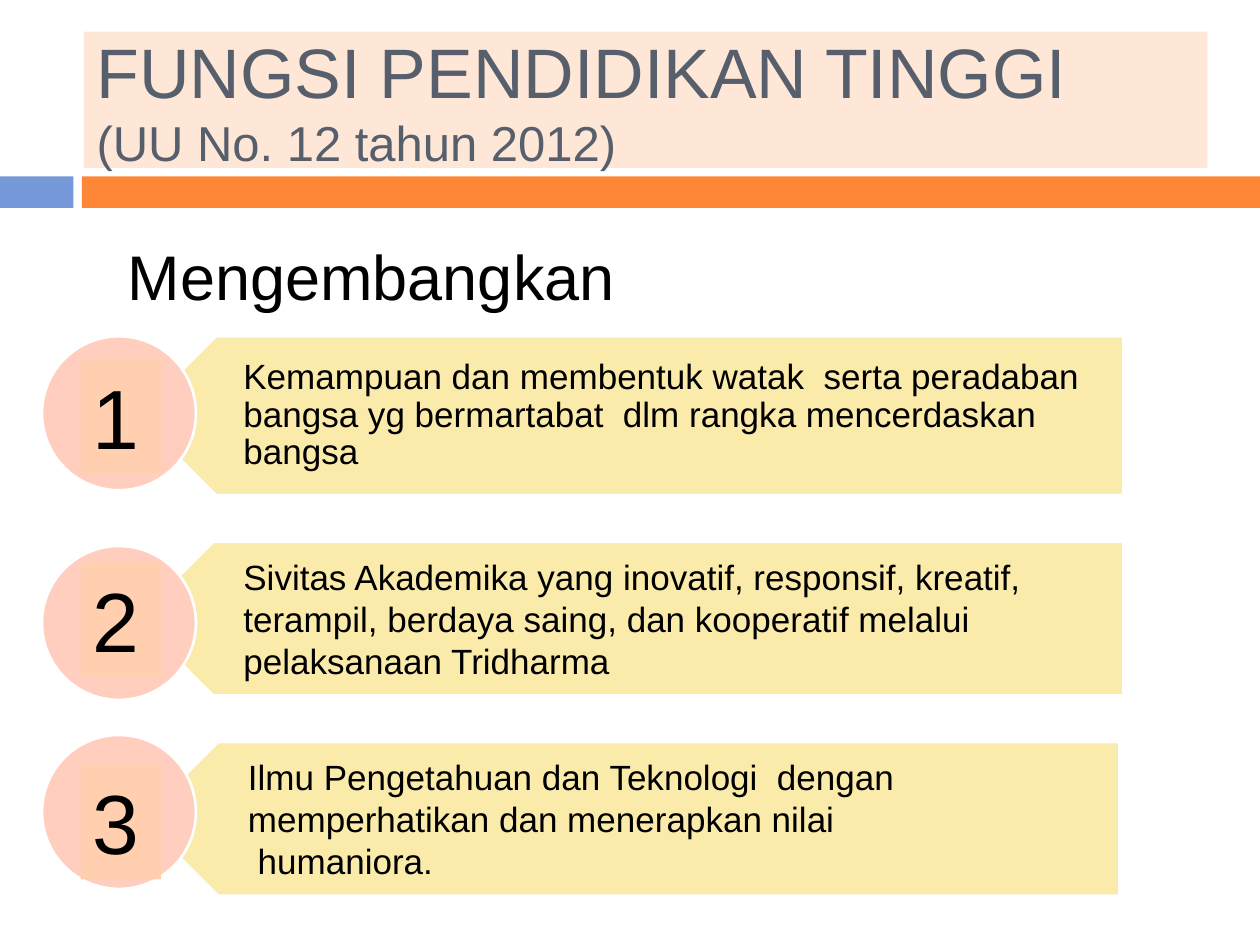
from dataclasses import dataclass

from pptx import Presentation
from pptx.dml.color import RGBColor
from pptx.enum.shapes import MSO_SHAPE
from pptx.enum.text import MSO_ANCHOR, MSO_AUTO_SIZE, PP_ALIGN
from pptx.util import Pt

RECT, OVAL, PLATE = MSO_SHAPE.RECTANGLE, MSO_SHAPE.OVAL, MSO_SHAPE.PENTAGON
TOP, MIDDLE = MSO_ANCHOR.TOP, MSO_ANCHOR.MIDDLE
LEFT, NO_FIT = PP_ALIGN.LEFT, MSO_AUTO_SIZE.NONE

FONT = "Arial"
BLACK, WHITE, SLATE = "000000", "FFFFFF", "575F6D"
BLUE, ORANGE, PEACH = "7598D9", "FE8637", "FFE7D7"
YELLOW, PINK, APRICOT = "FBEBAB", "FFCEBF", "FFCFAF"

CIRCLE_LEFT, CIRCLE_SIZE = 24, 88
NUMBER_LEFT, NUMBER_W, NUMBER_H = 46, 46, 65.5
TEXT_SHIFT = 22.4  # text starts this far right of the plate's tip
ROW_INSETS = {"margin_left": Pt(38.7), "margin_right": Pt(11.4),
              "margin_top": Pt(5.7), "margin_bottom": Pt(5.7)}


@dataclass
class Box:
    left: float
    top: float
    width: float
    height: float

    def points(self) -> tuple:
        return Pt(self.left), Pt(self.top), Pt(self.width), Pt(self.height)


@dataclass
class Row:
    plate: Box
    circle_top: float
    number_top: float
    paragraphs: list
    spacing: float = 1.0


ROWS = [
    Row(Box(78, 192.2, 564, 90.7), 192.2, 205.2,
        ["Kemampuan dan membentuk watak  serta peradaban bangsa yg "
         "bermartabat  dlm rangka mencerdaskan bangsa"], 0.9),
    Row(Box(78, 309.6, 564, 87.8), 312, 321.1,
        ["Sivitas Akademika yang inovatif, responsif, kreatif, terampil, "
         "berdaya saing, dan kooperatif melalui pelaksanaan Tridharma"]),
    Row(Box(80.6, 424, 559, 87.8), 420, 437,
        ["Ilmu Pengetahuan dan Teknologi  dengan memperhatikan dan "
         "menerapkan nilai", " humaniora."]),
]


def rgb(color: str) -> RGBColor:
    return RGBColor.from_string(color)


def paint(sp, fill: str) -> None:
    sp.fill.solid()
    sp.fill.fore_color.rgb = rgb(fill)


def add_shape(s, kind, box: Box, fill: str, outlined: bool = False):
    sp = s.shapes.add_shape(kind, *box.points())
    sp.shadow.inherit = False
    paint(sp, fill)
    if outlined:
        sp.line.color.rgb = rgb(WHITE)
        sp.line.width = Pt(1.5)
    else:
        sp.line.fill.background()
    return sp


def add_run(p, text: str, size: float, color: str = BLACK) -> None:
    r = p.add_run()
    r.text = text
    for name, value in {"name": FONT, "size": Pt(size)}.items():
        setattr(r.font, name, value)
    r.font.color.rgb = rgb(color)


def format_frame(tf, anchor=TOP, **extra) -> None:
    values = {"word_wrap": True, "auto_size": NO_FIT, "vertical_anchor": anchor}
    for name, value in {**values, **extra}.items():
        setattr(tf, name, value)


def write(sp, paragraphs: list, size: float, spacing: float = 1.0,
          anchor=TOP, **extra) -> None:
    tf = sp.text_frame
    format_frame(tf, anchor, **extra)
    for i, text in enumerate(paragraphs):
        p = tf.add_paragraph() if i else tf.paragraphs[0]
        p.alignment = LEFT
        p.line_spacing = spacing
        add_run(p, text, size)


def add_row(s, row: Row) -> None:
    plate = row.plate
    add_shape(s, PLATE, plate, YELLOW, outlined=True).rotation = 180
    text_box = Box(plate.left + TEXT_SHIFT, plate.top,
                   plate.width - TEXT_SHIFT, plate.height)
    write(s.shapes.add_textbox(*text_box.points()), row.paragraphs, 20,
          row.spacing, MIDDLE, **ROW_INSETS)
    add_shape(s, OVAL, Box(CIRCLE_LEFT, row.circle_top, CIRCLE_SIZE, CIRCLE_SIZE),
              PINK, outlined=True)


def add_number(s, number: int, row: Row) -> None:
    box = Box(NUMBER_LEFT, row.number_top, NUMBER_W, NUMBER_H)
    write(add_shape(s, RECT, box, APRICOT), [str(number)], 48)


def add_title(s) -> None:
    sp = s.shapes.title
    sp.left, sp.top, sp.width, sp.height = Box(48, 18, 642, 78).points()
    paint(sp, PEACH)
    format_frame(sp.text_frame, MIDDLE)
    p = sp.text_frame.paragraphs[0]
    p.alignment = LEFT
    add_run(p, "FUNGSI PENDIDIKAN TINGGI", 40, SLATE)
    p.add_line_break()
    add_run(p, "(UU No. 12 tahun 2012)", 28, SLATE)


def main() -> None:
    prs = Presentation()
    prs.slide_width, prs.slide_height = Pt(720), Pt(540)
    s = prs.slides.add_slide(prs.slide_layouts[5])

    # Title and the band below it
    add_shape(s, RECT, Box(0, 100.8, 42, 18), BLUE)
    add_shape(s, RECT, Box(46.8, 100.8, 673.2, 18), ORANGE)
    add_title(s)

    # Numbered rows
    for row in ROWS:
        add_row(s, row)
    for number, row in enumerate(ROWS, 1):
        add_number(s, number, row)

    # Heading of the rows
    heading = s.shapes.add_textbox(*Box(66, 132, 342, 51).points())
    write(heading, ["Mengembangkan"], 36)

    prs.save("out.pptx")


if __name__ == "__main__":
    main()
